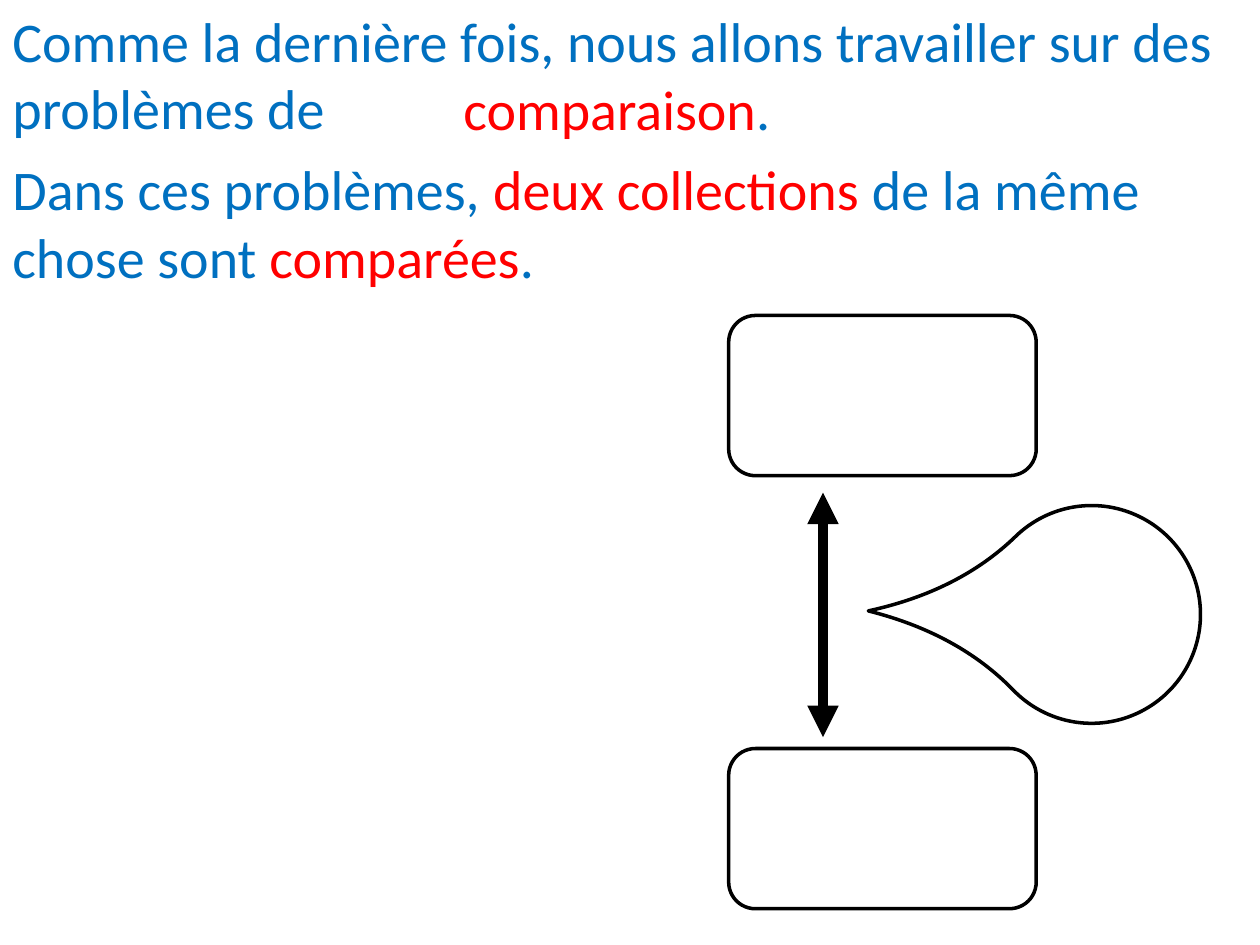
"""Build a slide that introduces comparison problems with an empty diagram."""
from dataclasses import dataclass

from lxml.etree import SubElement
from pptx import Presentation
from pptx.dml.color import RGBColor
from pptx.enum.shapes import MSO_CONNECTOR as Connector, MSO_SHAPE as Preset
from pptx.oxml.ns import qn
from pptx.util import Cm, Pt


@dataclass(frozen=True)
class Theme:
    font: str = "Calibri"
    text_size: int = 32
    text: RGBColor = RGBColor(0x00, 0x70, 0xC0)
    accent: RGBColor = RGBColor(0xFF, 0x00, 0x00)
    outline: RGBColor = RGBColor(0x00, 0x00, 0x00)
    outline_width: int = 2
    arrow_width: int = 6


THEME = Theme()
SLIDE_SIZE = (25.4, 19.05)

TEXTS = [
    ((0, 0, 25.4, 3), [
        ("Comme la dernière fois, nous allons travailler sur des problèmes de", THEME.text)]),
    ((9.09, 1.37, 8.2, 1.63), [("comparaison", THEME.accent), (".", THEME.text)]),
    ((0, 3, 25.4, 3), [
        ("Dans ces problèmes, ", THEME.text),
        ("deux collections", THEME.accent),
        (" de la même chose sont ", THEME.text),
        ("comparées", THEME.accent),
        (".", THEME.text)]),
]

COLLECTION_LEFT, COLLECTION_SIZE = 14.69, (6.2, 3.23)
COLLECTION_TOPS = [6.36, 15.09]
ARROW_X, ARROW_TOP, ARROW_BOTTOM = 16.59, 9.93, 14.86
DIFFERENCE_BOX = (19.81, 10.19, 4.39, 4.39)
DIFFERENCE_ROTATION, DIFFERENCE_POINT = 225.9, 1.45


def add_text(slide, runs, *, box, size=THEME.text_size, font=THEME.font):
    text_frame = slide.shapes.add_textbox(*map(Cm, box)).text_frame
    text_frame.word_wrap = True
    paragraph = text_frame.paragraphs[0]
    for text, color in runs:
        run = paragraph.add_run()
        run.text = text
        run.font.name = font
        run.font.size = Pt(size)
        run.font.color.rgb = color


def style_line(line, width):
    line.color.rgb = THEME.outline
    line.width = Pt(width)


def add_outline(slide, preset, box):
    shape = slide.shapes.add_shape(preset, *map(Cm, box))
    shape.shadow.inherit = False
    shape.fill.background()
    style_line(shape.line, THEME.outline_width)
    return shape


def add_double_arrow(slide, x, top, bottom):
    arrow = slide.shapes.add_connector(Connector.STRAIGHT, *map(Cm, (x, top, x, bottom)))
    style_line(arrow.line, THEME.arrow_width)
    properties = arrow._element.spPr
    for end in ("a:headEnd", "a:tailEnd"):
        SubElement(properties.find(qn("a:ln")), qn(end), type="triangle")
    SubElement(properties, qn("a:effectLst"))


def main():
    presentation = Presentation()
    presentation.slide_width, presentation.slide_height = map(Cm, SLIDE_SIZE)
    slide = presentation.slides.add_slide(presentation.slide_layouts.get_by_name("Blank"))

    for box, runs in TEXTS:
        add_text(slide, runs, box=box)
    for top in COLLECTION_TOPS:
        add_outline(slide, Preset.ROUNDED_RECTANGLE, (COLLECTION_LEFT, top, *COLLECTION_SIZE))
    add_double_arrow(slide, ARROW_X, ARROW_TOP, ARROW_BOTTOM)
    difference = add_outline(slide, Preset.TEAR, DIFFERENCE_BOX)
    difference.adjustments[0] = DIFFERENCE_POINT
    difference.rotation = DIFFERENCE_ROTATION

    presentation.save("out.pptx")


if __name__ == "__main__":
    main()
